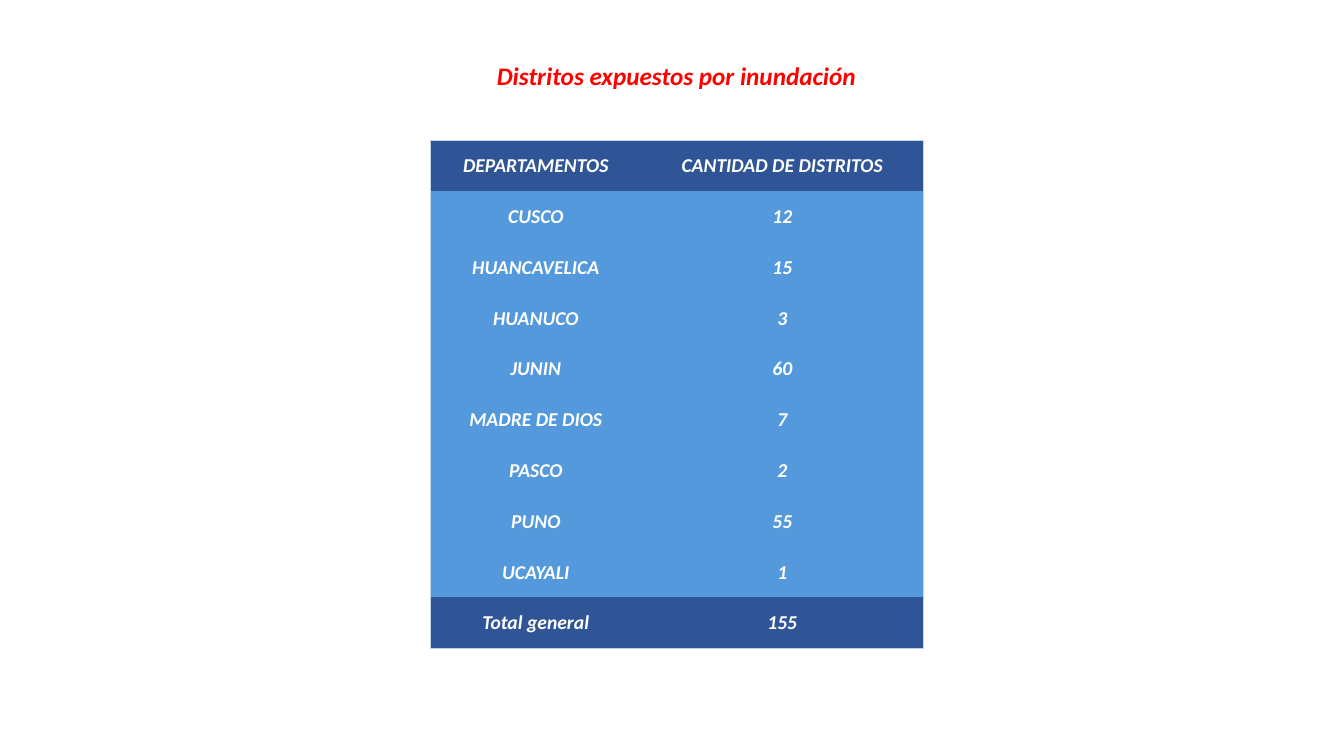
from lxml import etree
from pptx import Presentation, util as u
from pptx.dml.color import RGBColor
from pptx.enum import text
from pptx.oxml.ns import qn

COLORS = {"title": "FF0000", "band": "2F5597", "body": "5399DB",
          "label": "FFFFFF", "border": "C4D5EB"}
FONT = "Calibri"
DISTRICTS = [("CUSCO", 12), ("HUANCAVELICA", 15), ("HUANUCO", 3), ("JUNIN", 60),
             ("MADRE DE DIOS", 7), ("PASCO", 2), ("PUNO", 55), ("UCAYALI", 1)]
ROWS = [("DEPARTAMENTOS", "CANTIDAD DE DISTRITOS"), *DISTRICTS,
        ("Total general", sum(count for _, count in DISTRICTS))]
COLUMN_SHARES = (0.427, 0.573)


def write(frame, wording, size, color):
    """Put one centred bold italic line into a text frame."""
    line = frame.paragraphs[0]
    line.alignment = text.PP_ALIGN.CENTER
    run = line.add_run()
    run.text = str(wording)
    run.font.name = FONT
    run.font.size = u.Pt(size)
    run.font.bold = run.font.italic = True
    run.font.color.rgb = RGBColor.from_string(COLORS[color])


def set_borders(cell, edges):
    """Draw the named edges of a cell and clear the others."""
    properties = cell._tc.get_or_add_tcPr()
    for place, edge in enumerate(("lnL", "lnR", "lnT", "lnB")):
        border = etree.Element(qn(f"a:{edge}"), w=str(u.Pt(0.5)))
        if edge in edges:
            fill = etree.SubElement(border, qn("a:solidFill"))
            etree.SubElement(fill, qn("a:srgbClr"), val=COLORS["border"])
        else:
            etree.SubElement(border, qn("a:noFill"))
        properties.insert(place, border)


def add_title(slide, left, top, width, height):
    """Place the heading in the given box."""
    frame = slide.shapes.add_textbox(left, top, width, height).text_frame
    frame.word_wrap = False
    frame.auto_size = text.MSO_AUTO_SIZE.SHAPE_TO_FIT_TEXT
    write(frame, "Distritos expuestos por inundación", size=18, color="title")


def add_district_table(slide, left, top, width, height):
    """Place the table of districts in the given box."""
    last_row, last_column = len(ROWS) - 1, len(COLUMN_SHARES) - 1
    table = slide.shapes.add_table(len(ROWS), len(COLUMN_SHARES),
                                   left, top, width, height).table
    table.first_row = table.horz_banding = False
    for column, share in zip(table.columns, COLUMN_SHARES):
        column.width = int(width * share)
    for r, values in enumerate(ROWS):
        table.rows[r].height = height // len(ROWS)
        for c, value in enumerate(values):
            cell = table.cell(r, c)
            cell.vertical_anchor = text.MSO_ANCHOR.MIDDLE
            cell.margin_left = cell.margin_right = cell.margin_top = u.Inches(0.01)
            cell.margin_bottom = 0
            cell.fill.solid()
            fill = "band" if r in (0, last_row) else "body"
            cell.fill.fore_color.rgb = RGBColor.from_string(COLORS[fill])
            write(cell.text_frame, value, size=14, color="label")
            outer = {"lnL": c == 0, "lnR": c == last_column,
                     "lnT": r == 0, "lnB": r == last_row}
            set_borders(cell, [edge for edge, drawn in outer.items() if drawn])


def main():
    """Build the slide and save it."""
    deck = Presentation()
    deck.slide_width, deck.slide_height = u.Inches(13.33), u.Inches(7.5)
    slide = deck.slides.add_slide(deck.slide_layouts[6])
    add_title(slide, u.Inches(4.81), u.Inches(0.55), u.Inches(3.8), u.Inches(0.4))
    add_district_table(slide, u.Inches(4.27), u.Inches(1.39),
                       u.Inches(4.89), u.Inches(5.04))
    deck.save("out.pptx")


if __name__ == "__main__":
    main()
